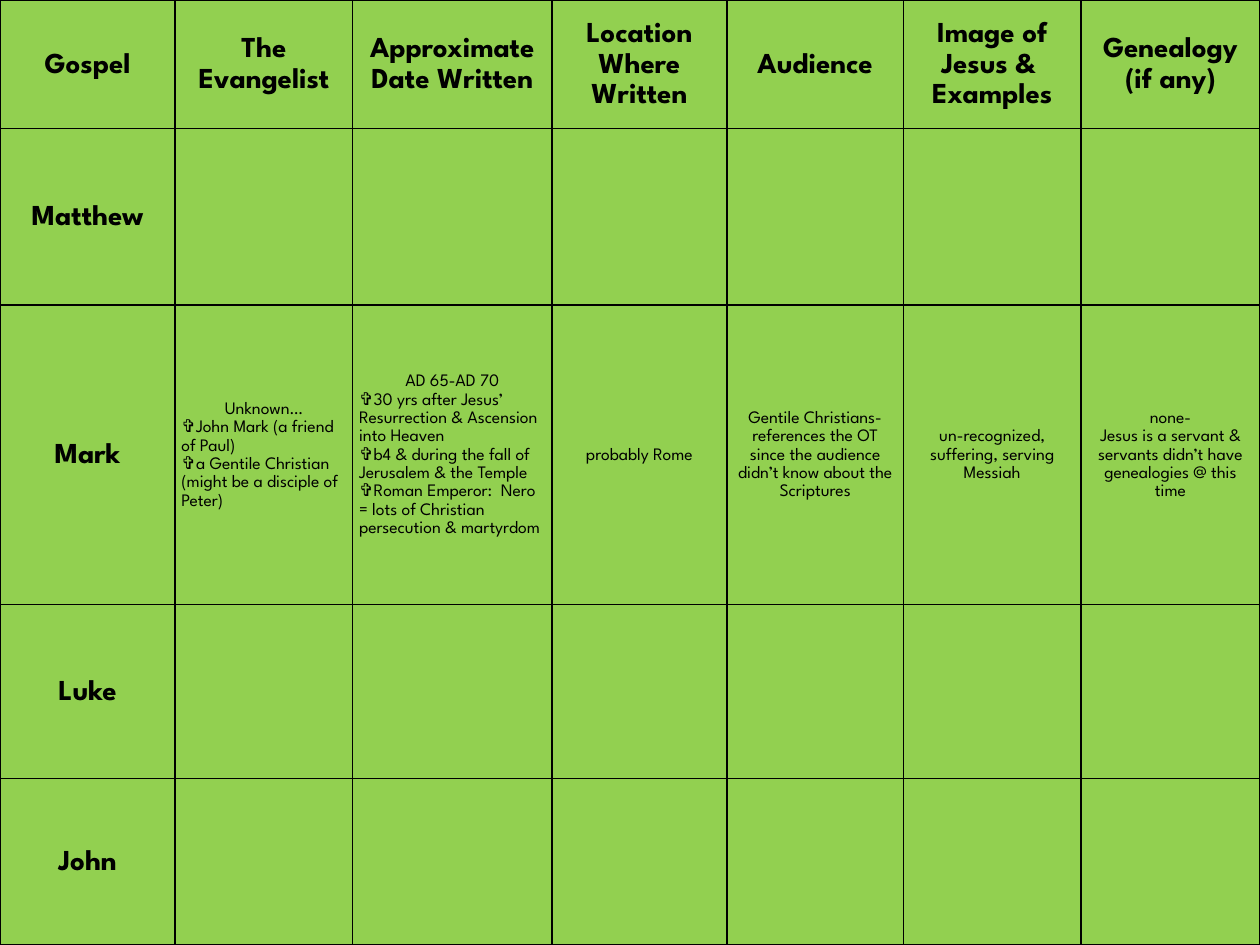
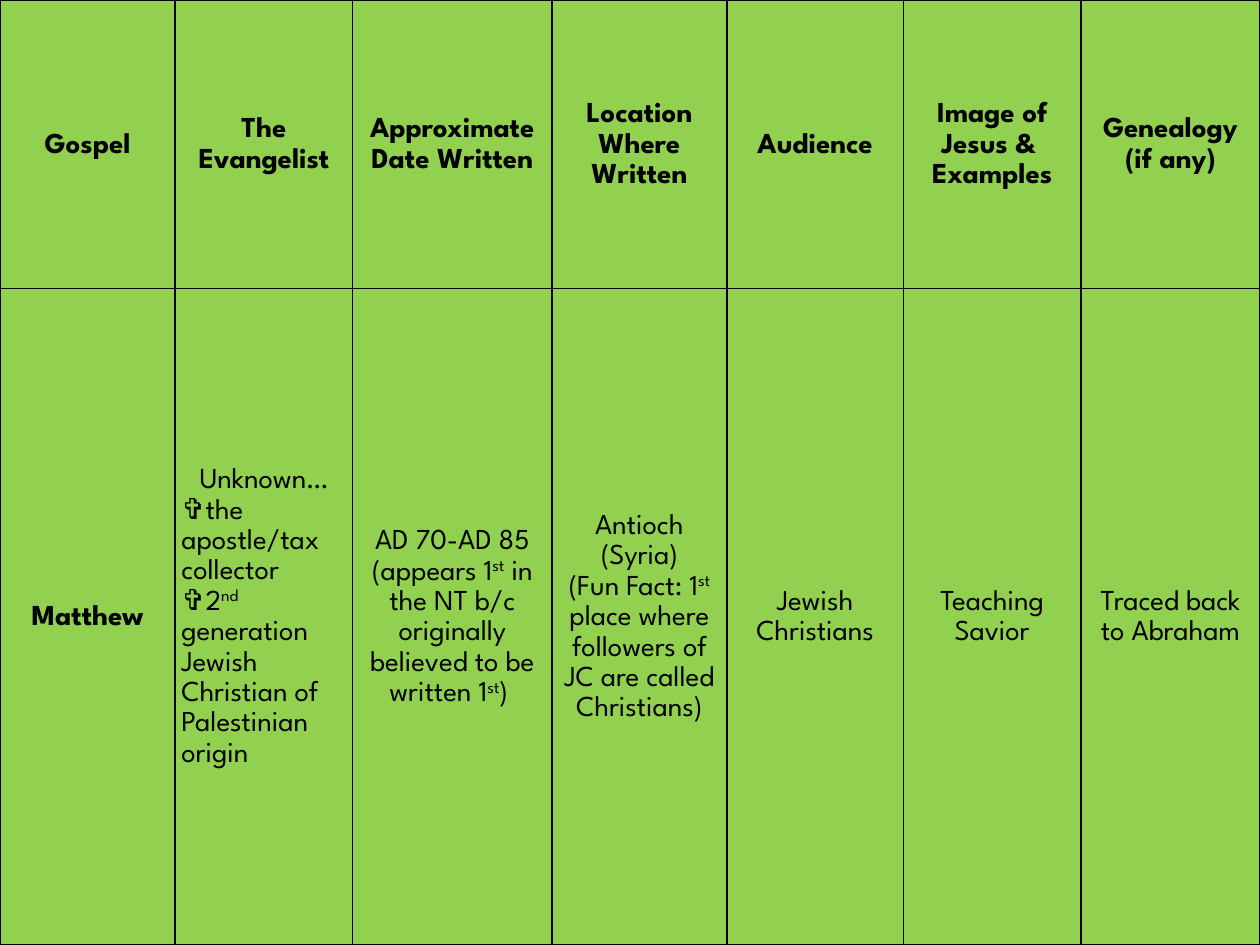
"""Build two slides of a comparison chart of the four Gospels."""
import pptx
import pptx.dml.color
import pptx.enum.text
import pptx.oxml
import pptx.oxml.ns
import pptx.util

Inches = pptx.util.Inches
Pt = pptx.util.Pt
FONT = "League Spartan"
GREEN = "92D050"
BLACK = "000000"
BULLET = "✞"
HEADING_SIZE = 16.5
COLUMN_WIDTHS = [1.39, 1.41, 1.58, 1.39, 1.4, 1.41, 1.42]
HEADINGS = [
    "Gospel",
    "The Evangelist",
    "Approximate Date Written",
    "Location Where Written",
    "Audience",
    "Image of Jesus & \nExamples",
    "Genealogy\n(if any)",
]
NO_ANSWERS = [""] * (len(HEADINGS) - 1)
MARK = [
    "Mark",
    "Unknown…\n✞John Mark (a friend of Paul)\n"
    "✞a Gentile Christian (might be a disciple of Peter)",
    "AD 65-AD 70\n✞30 yrs after Jesus’ Resurrection & Ascension into Heaven\n"
    "✞b4 & during the fall of Jerusalem & the Temple\n"
    "✞Roman Emperor:  Nero = lots of Christian persecution & martyrdom",
    "probably Rome",
    "Gentile Christians-references the OT since the audience didn’t know about the Scriptures",
    "un-recognized, suffering, serving Messiah",
    "none-\nJesus is a servant & servants didn’t have genealogies @ this time",
]
MATTHEW = [
    "Matthew",
    "Unknown…\n✞the apostle/tax collector\n"
    "✞2^nd^ generation Jewish Christian of Palestinian origin",
    "AD 70-AD 85\n(appears 1^st^ in the NT b/c originally believed to be written 1^st^) ",
    "Antioch\n(Syria)\n(Fun Fact: 1^st^ place where followers of JC are called Christians)",
    "Jewish Christians",
    "Teaching Savior",
    "Traced back to Abraham",
]
SLIDES = [
    {
        "row_heights": [1.02, 1.4, 2.38, 1.38, 1.32],
        "rows": [HEADINGS, ["Matthew"] + NO_ANSWERS, MARK, ["Luke"] + NO_ANSWERS, ["John"] + NO_ANSWERS],
        "answer_size": 10,
    },
    {"row_heights": [2.29, 5.21], "rows": [HEADINGS, MATTHEW], "answer_size": HEADING_SIZE},
]


def color(hex_value):
    return pptx.dml.color.RGBColor.from_string(hex_value)


def write_cell(cell, text, size, bold):
    """Write lines into a cell; a leading cross is a bullet, carets enclose superscripts."""
    cell.vertical_anchor = pptx.enum.text.MSO_ANCHOR.MIDDLE
    cell.margin_left = cell.margin_right = Inches(0.05)
    cell.margin_top = cell.margin_bottom = 0
    for line_number, line in enumerate(text.split("\n")):
        frame = cell.text_frame
        paragraph = frame.add_paragraph() if line_number else frame.paragraphs[0]
        paragraph.line_spacing = 1.15
        if line.startswith(BULLET):
            paragraph.alignment = pptx.enum.text.PP_ALIGN.LEFT
            properties = paragraph._p.get_or_add_pPr()
            properties.set("marL", "0")
            properties.set("indent", "0")
            properties.append(pptx.oxml.parse_xml(
                f'<a:buChar {pptx.oxml.ns.nsdecls("a")} char="{BULLET}"/>'))
        else:
            paragraph.alignment = pptx.enum.text.PP_ALIGN.CENTER
        for part_number, part in enumerate(line.removeprefix(BULLET).split("^")):
            run = paragraph.add_run()
            run.text = part
            run.font.name = FONT
            run.font.size = Pt(size)
            run.font.bold = bold
            run.font.color.rgb = color(BLACK)
            if part_number % 2:
                run._r.get_or_add_rPr().set("baseline", "30000")


presentation = pptx.Presentation()
presentation.slide_width = Inches(10)
presentation.slide_height = Inches(7.5)

for content in SLIDES:
    slide = presentation.slides.add_slide(presentation.slide_layouts[6])
    rows = content["rows"]
    table = slide.shapes.add_table(
        len(rows), len(HEADINGS), 0, 0, presentation.slide_width, presentation.slide_height).table
    table.first_row = False
    table.horz_banding = False
    for column, width in zip(table.columns, COLUMN_WIDTHS):
        column.width = Inches(width)
    for row, height in zip(table.rows, content["row_heights"]):
        row.height = Inches(height)

    for row_number, texts in enumerate(rows):
        for column_number, text in enumerate(texts):
            cell = table.cell(row_number, column_number)
            cell.fill.solid()
            cell.fill.fore_color.rgb = color(GREEN)
            for position, side in enumerate("LRTB"):
                cell._tc.get_or_add_tcPr().insert(position, pptx.oxml.parse_xml(
                    f'<a:ln{side} {pptx.oxml.ns.nsdecls("a")} w="{Pt(1)}"><a:solidFill>'
                    f'<a:srgbClr val="{BLACK}"/></a:solidFill></a:ln{side}>'))
            if text:
                is_heading = row_number == 0 or column_number == 0
                size = HEADING_SIZE if is_heading else content["answer_size"]
                write_cell(cell, text, size, is_heading)

presentation.save("out.pptx")
